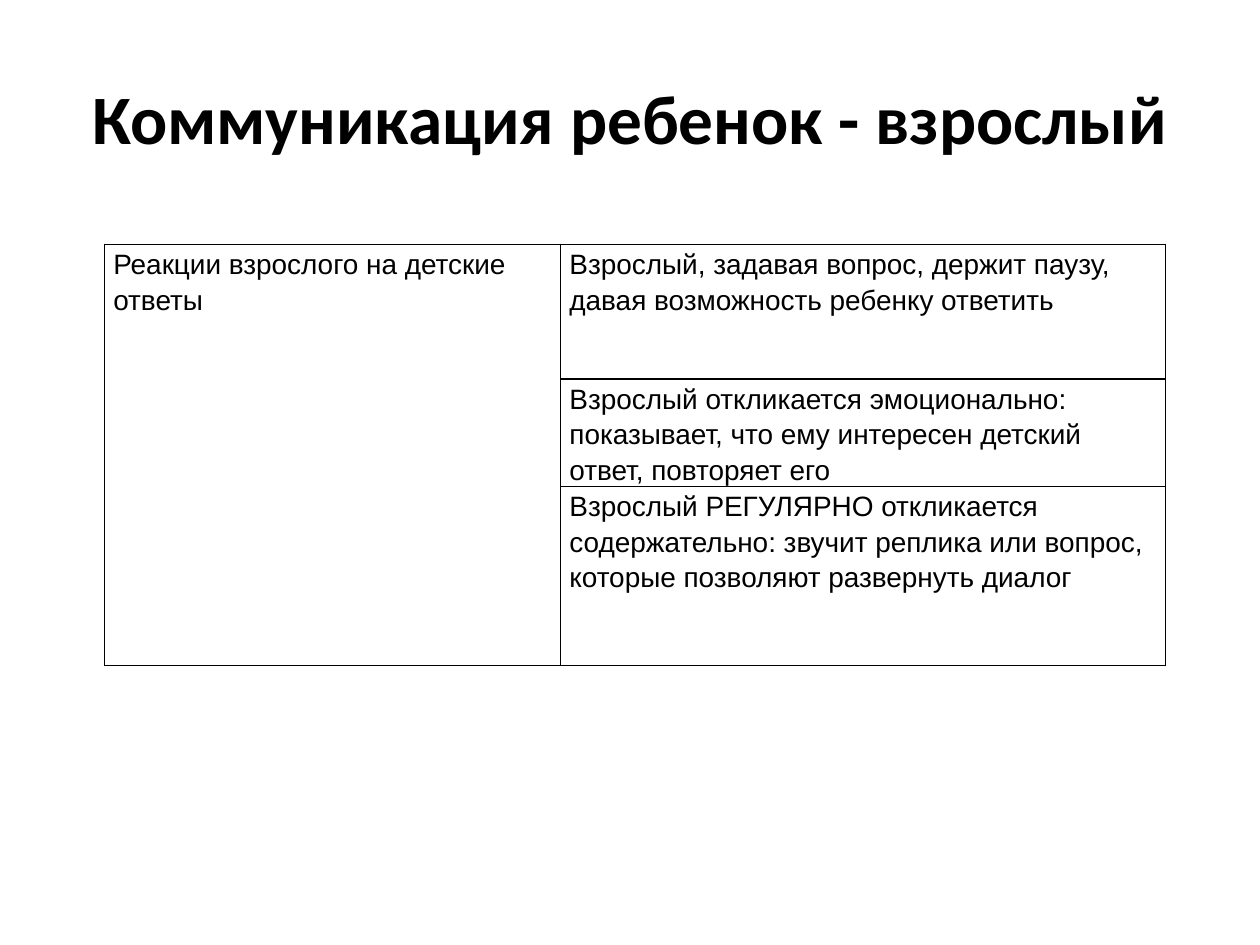
from lxml import etree
from pptx import Presentation
from pptx.dml.color import RGBColor
from pptx.enum.text import MSO_ANCHOR, MSO_AUTO_SIZE, PP_ALIGN
from pptx.oxml.ns import qn
from pptx.util import Inches, Pt

CENTER = PP_ALIGN.CENTER
MIDDLE = MSO_ANCHOR.MIDDLE
NO_AUTOFIT = MSO_AUTO_SIZE.NONE
TITLE_ONLY = 5

COLORS = {"text": "000000", "border": "000000", "cell": "FFFFFF"}
TITLE = "Коммуникация ребенок - взрослый"
TOPIC = "Реакции взрослого на детские ответы"
REACTIONS = [
    "Взрослый, задавая вопрос, держит паузу, давая возможность ребенку ответить",
    "Взрослый откликается эмоционально: показывает, что ему интересен "
    "детский ответ, повторяет его",
    "Взрослый РЕГУЛЯРНО откликается содержательно: звучит реплика или вопрос, "
    "которые позволяют развернуть диалог",
]
COLUMN_WIDTHS = [3.62, 4.8]
ROW_HEIGHTS = [1.07, 0.85, 1.42]


def format_runs(paragraph, font_name, size, bold=False):
    for run in paragraph.runs:
        run.font.name = font_name
        run.font.size = Pt(size)
        run.font.bold = bold
        run.font.color.rgb = RGBColor.from_string(COLORS["text"])


def set_title(slide):
    title = slide.shapes.title
    title.left, title.top = Inches(0.5), Inches(0.3)
    title.width, title.height = Inches(9), Inches(1.25)
    text_frame = title.text_frame
    text_frame.text = TITLE
    text_frame.auto_size = NO_AUTOFIT
    text_frame.vertical_anchor = MIDDLE
    paragraph = text_frame.paragraphs[0]
    paragraph.alignment = CENTER
    format_runs(paragraph, "Calibri", 39.6, bold=True)


def add_borders(cell):
    properties = cell._tc.get_or_add_tcPr()
    for position, side in enumerate(("lnL", "lnR", "lnT", "lnB")):
        line = etree.Element(qn(f"a:{side}"), w=str(Pt(1)))
        fill = etree.SubElement(line, qn("a:solidFill"))
        etree.SubElement(fill, qn("a:srgbClr"), val=COLORS["border"])
        properties.insert(position, line)


def format_cell(cell):
    cell.margin_left = cell.margin_right = Inches(0.07)
    cell.margin_top = cell.margin_bottom = 0
    cell.fill.solid()
    cell.fill.fore_color.rgb = RGBColor.from_string(COLORS["cell"])
    add_borders(cell)
    for paragraph in cell.text_frame.paragraphs:
        paragraph.line_spacing = 1.15
        paragraph.font.size = Pt(16)
        format_runs(paragraph, "Arial", 16)


def add_reactions_table(slide):
    frame = slide.shapes.add_table(
        len(ROW_HEIGHTS), len(COLUMN_WIDTHS), Inches(0.83), Inches(1.94),
        Inches(sum(COLUMN_WIDTHS)), Inches(sum(ROW_HEIGHTS)))
    table = frame.table
    table.first_row = table.horz_banding = False
    for column, width in zip(table.columns, COLUMN_WIDTHS):
        column.width = Inches(width)
    for row, height in zip(table.rows, ROW_HEIGHTS):
        row.height = Inches(height)

    table.cell(0, 0).merge(table.cell(len(ROW_HEIGHTS) - 1, 0))
    table.cell(0, 0).text = TOPIC
    for index, reaction in enumerate(REACTIONS):
        table.cell(index, 1).text = reaction
    for cell in table.iter_cells():
        format_cell(cell)


def main():
    presentation = Presentation()
    presentation.slide_width = Inches(10)
    presentation.slide_height = Inches(7.5)
    slide = presentation.slides.add_slide(presentation.slide_layouts[TITLE_ONLY])
    set_title(slide)
    add_reactions_table(slide)
    presentation.save("out.pptx")


if __name__ == "__main__":
    main()
